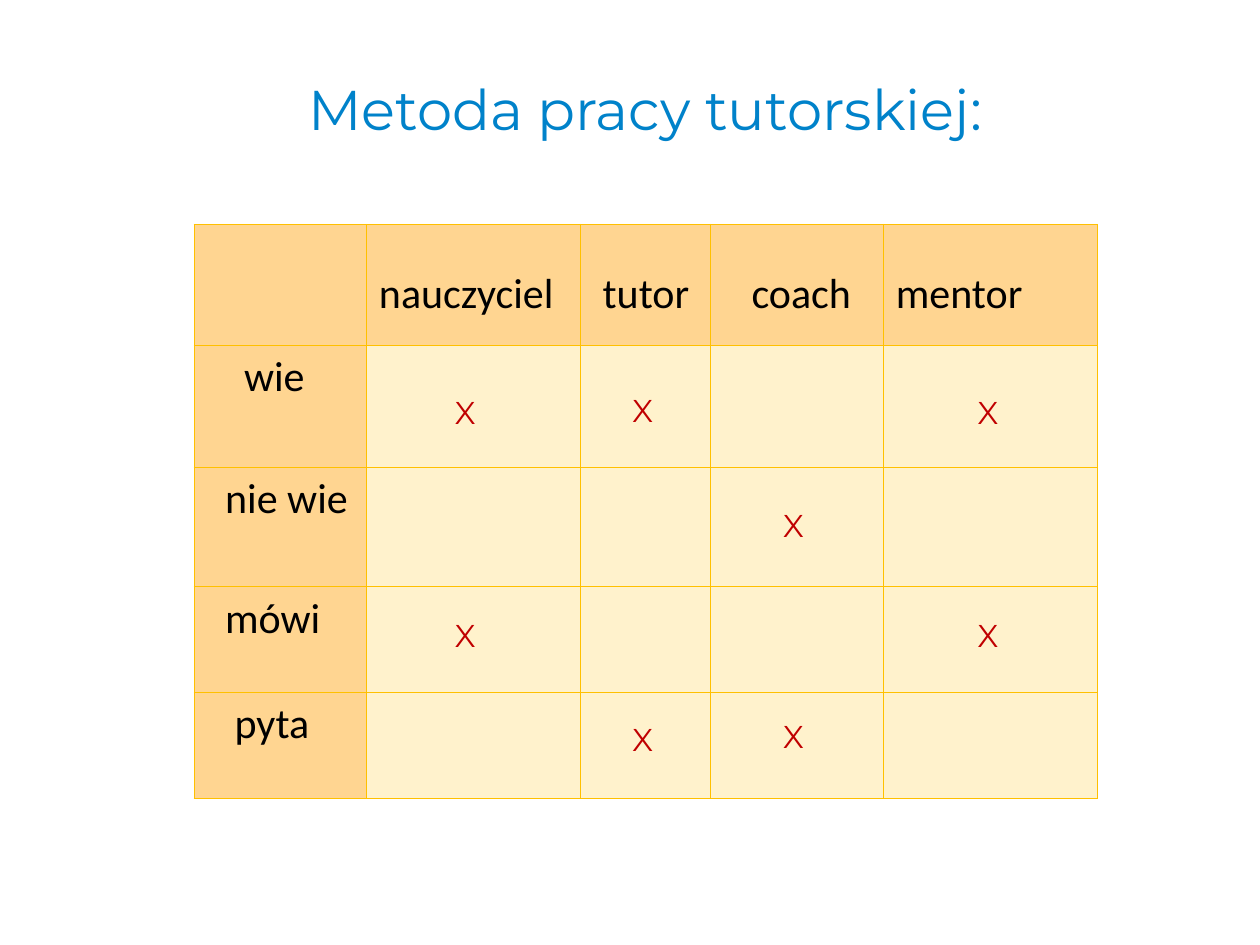
from lxml.etree import SubElement
from pptx import Presentation
from pptx.dml.color import RGBColor
from pptx.enum.text import MSO_AUTO_SIZE, PP_ALIGN
from pptx.oxml.ns import qn
from pptx.util import Cm, Pt

BLUE = RGBColor(0x00, 0x82, 0xCA)
RED = RGBColor(0xC0, 0x00, 0x00)
BLACK = RGBColor(0x00, 0x00, 0x00)
ORANGE = RGBColor(0xFF, 0xD5, 0x91)
CREAM = RGBColor(0xFF, 0xF2, 0xCC)
GOLD = RGBColor(0xFF, 0xC0, 0x00)

COLUMN_WIDTHS = [3.48, 4.32, 2.62, 3.48, 4.32]
ROW_HEIGHTS = [2.44, 2.46, 2.41, 2.13, 2.13]
INDENT_STEP = 0.19
# Each label has its indent in steps
ROLES = [("", 0), ("nauczyciel", 0), ("tutor", 1), ("coach", 3), ("mentor", 0)]
SKILLS = [("wie", 4), ("nie wie", 2), ("mówi", 2), ("pyta", 3)]
# Left edge of each column of marks, with the tops of its marks
MARKS = {8.92: (7.75, 12.24), 12.5: (7.7, 14.33),
         15.54: (10.03, 14.27), 19.46: (7.75, 12.24)}


def write(frame, text, font="Calibri", size=24, color=BLACK,
          align=PP_ALIGN.LEFT, line_spacing=None, space_after=None):
    para = frame.paragraphs[0]
    para.alignment = align
    para.line_spacing = line_spacing
    para.space_after = space_after
    span = para.add_run()
    span.text = text
    span.font.name = font
    span.font.size = Pt(size)
    span.font.color.rgb = color


class SlideBuilder:
    def __init__(self, page, font="Montserrat"):
        self.page = page
        self.font = font

    def text_box(self, text, left, top, width, height, wrap=True, **style):
        box = self.page.shapes.add_textbox(Cm(left), Cm(top), Cm(width), Cm(height))
        box.text_frame.word_wrap = wrap
        box.text_frame.auto_size = MSO_AUTO_SIZE.SHAPE_TO_FIT_TEXT
        write(box.text_frame, text, font=self.font, **style)

    def border(self, cell):
        properties = cell._tc.get_or_add_tcPr()
        for side in ("a:lnL", "a:lnR", "a:lnT", "a:lnB"):
            line = SubElement(properties, qn(side), w=str(Pt(0.5)))
            fill = SubElement(line, qn("a:solidFill"))
            SubElement(fill, qn("a:srgbClr"), val=str(GOLD))

    def cell(self, cell, fill, label="", indent=0, top=0.13):
        self.border(cell)
        cell.fill.solid()
        cell.fill.fore_color.rgb = fill
        cell.margin_left = Cm(0.25 + indent * INDENT_STEP)
        cell.margin_top = Cm(top)
        if label:
            write(cell.text_frame, label)

    def table(self, left, top):
        table = self.page.shapes.add_table(
            len(ROW_HEIGHTS), len(COLUMN_WIDTHS), Cm(left), Cm(top),
            Cm(sum(COLUMN_WIDTHS)), Cm(sum(ROW_HEIGHTS))).table
        table.first_row = table.horz_banding = False
        for column, width in zip(table.columns, COLUMN_WIDTHS):
            column.width = Cm(width)
        for row, height in zip(table.rows, ROW_HEIGHTS):
            row.height = Cm(height)
        # Header row
        for column, (label, indent) in enumerate(ROLES):
            self.cell(table.cell(0, column), ORANGE, label, indent, top=0.9)
        # Label column and empty body
        for row, (label, indent) in enumerate(SKILLS, start=1):
            self.cell(table.cell(row, 0), ORANGE, label, indent)
            for column in range(1, len(ROLES)):
                self.cell(table.cell(row, column), CREAM)


def main():
    deck = Presentation()
    deck.slide_width, deck.slide_height = Cm(25.4), Cm(19.05)
    builder = SlideBuilder(deck.slides.add_slide(deck.slide_layouts[6]))

    # Title
    builder.text_box("Metoda pracy tutorskiej:", 3.18, 1.37, 19.66, 1.63,
                     size=32, color=BLUE, align=PP_ALIGN.CENTER)
    # Comparison table
    builder.table(3.91, 4.52)
    # Marks over the table
    for left, tops in MARKS.items():
        for top in tops:
            builder.text_box("X", left, top, 1.02, 1.09, wrap=False, size=18,
                             color=RED, line_spacing=1.07, space_after=Pt(8))
    deck.save("out.pptx")


if __name__ == "__main__":
    main()
